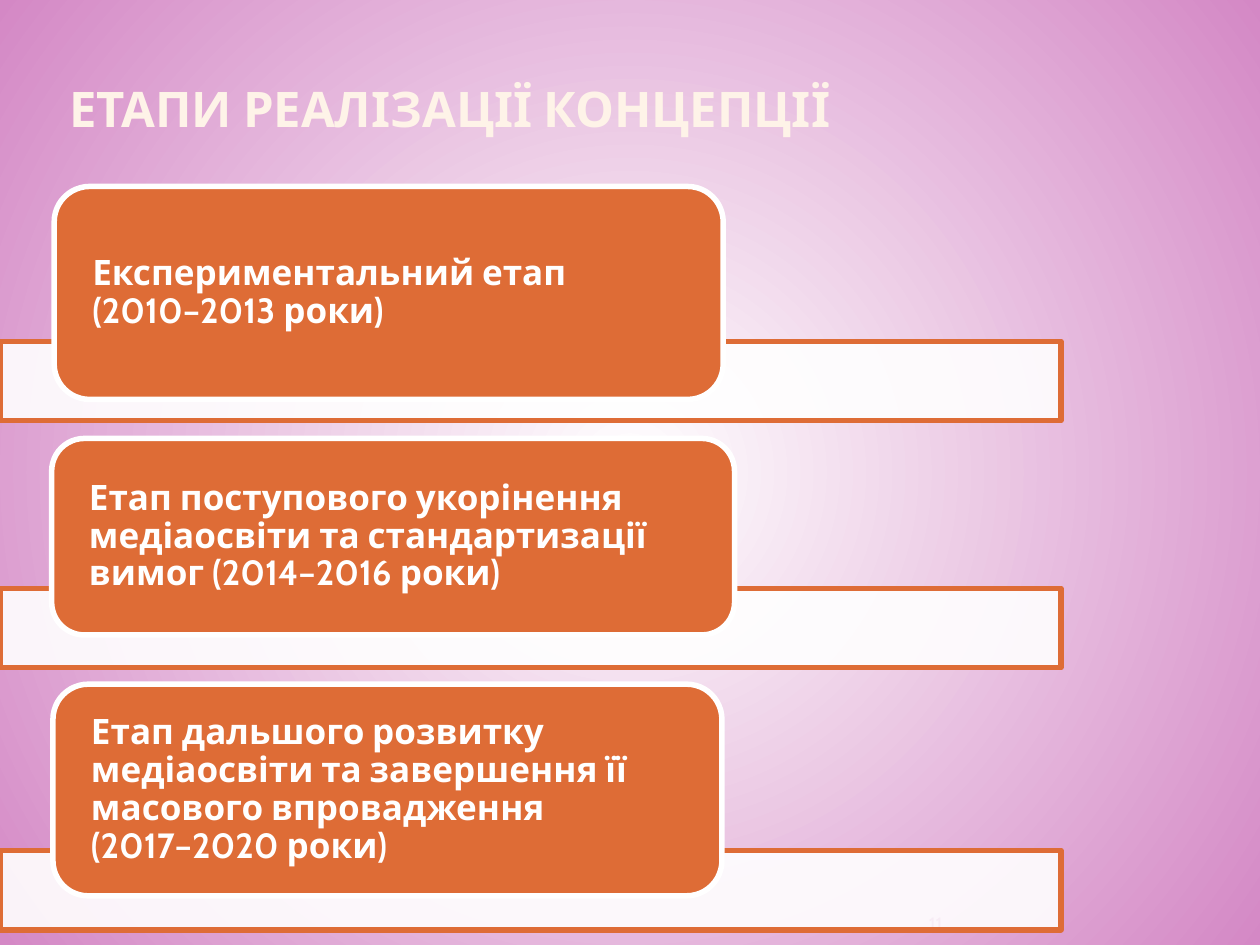
from lxml import etree
from pptx import Presentation
from pptx.dml.color import RGBColor
from pptx.enum import shapes, text
from pptx.oxml import ns
from pptx.util import Inches, Pt

COLORS = {
    "white": "FFFFFF",
    "pink": "D488C5",
    "cream": "FEF3E8",
    "orange": "DE6C36",
    "purple": "B13F9A",
}


def write_text(shape, words, size, color, side_inset, **formats):
    """Fill a shape's text frame with one paragraph; formats go to the paragraph."""
    frame = shape.text_frame
    frame_values = {
        "word_wrap": True,
        "margin_left": Inches(side_inset),
        "margin_right": Inches(side_inset),
        "margin_top": 0,
        "margin_bottom": 0,
    }
    for name, value in frame_values.items():
        setattr(frame, name, value)
    frame.text = words
    paragraph = frame.paragraphs[0]
    for name, value in formats.items():
        setattr(paragraph, name, value)
    for run in paragraph.runs:
        run.font.name = "Cabin"
        run.font.size = Pt(size)
        run.font.bold = size >= 20
        run.font.color.rgb = RGBColor.from_string(COLORS[color])
    return frame


def add_box(slide, kind, place, fill, line):
    shape = slide.shapes.add_shape(kind, *map(Inches, place))
    shape.shadow.inherit = False
    shape.fill.solid()
    shape.fill.fore_color.rgb = RGBColor.from_string(COLORS[fill])
    shape.line.color.rgb = RGBColor.from_string(COLORS[line])
    shape.line.width = Pt(3.15)
    return shape


presentation = Presentation()
presentation.slide_width = Inches(10)
presentation.slide_height = Inches(7.5)
slide = presentation.slides.add_slide(presentation.slide_layouts[6])

# Radial background, white in the centre
background = slide.background.fill
background.gradient()
for stop, color, position in zip(background.gradient_stops, ("white", "pink"), (0, 1)):
    stop.color.rgb = RGBColor.from_string(COLORS[color])
    stop.position = position
linear = next(slide.element.iter(ns.qn("a:lin")))
radial = etree.Element(ns.qn("a:path"), path="circle")
etree.SubElement(radial, ns.qn("a:fillToRect"),
                 {side: "50000" for side in "ltrb"})
linear.getparent().replace(linear, radial)

# Title and slide number
title = slide.shapes.add_textbox(Inches(0.5), Inches(0.35), Inches(7.92), Inches(0.74))
frame = write_text(title, "ЕТАПИ РЕАЛІЗАЦІЇ КОНЦЕПЦІЇ", 28, "cream", 0.05)
frame.vertical_anchor = text.MSO_ANCHOR.BOTTOM

number = slide.shapes.add_textbox(Inches(6.84), Inches(7.17), Inches(0.64), Inches(0.25))
frame = write_text(number, "11", 11, "purple", 0, alignment=text.PP_ALIGN.RIGHT)
frame.vertical_anchor = text.MSO_ANCHOR.BOTTOM

# Stages: bar top, card place, wording
stages = [
    (2.71, (0.43, 1.48, 5.31, 1.69),
     "Експериментальний етап\v(2010–2013 роки)"),
    (4.67, (0.41, 3.48, 5.42, 1.56),
     "Етап поступового укорінення медіаосвіти та стандартизації вимог (2014–2016 роки)"),
    (6.75, (0.42, 5.43, 5.31, 1.68),
     "Етап дальшого розвитку медіаосвіти та завершення її масового впровадження\v(2017–2020 роки)"),
]
for bar_top, card_place, words in stages:
    bar = add_box(slide, shapes.MSO_SHAPE.RECTANGLE,
                  (0, bar_top, 8.42, 0.63), "white", "orange")
    bar_color = bar.fill._xPr.find(ns.qn("a:solidFill"))[0]
    etree.SubElement(bar_color, ns.qn("a:alpha"), val="90000")

    card = add_box(slide, shapes.MSO_SHAPE.ROUNDED_RECTANGLE,
                   card_place, "orange", "white")
    frame = write_text(card, words, 20, "white", 0.22,
                       alignment=text.PP_ALIGN.LEFT, line_spacing=0.9)
    frame.vertical_anchor = text.MSO_ANCHOR.MIDDLE

presentation.save("out.pptx")
